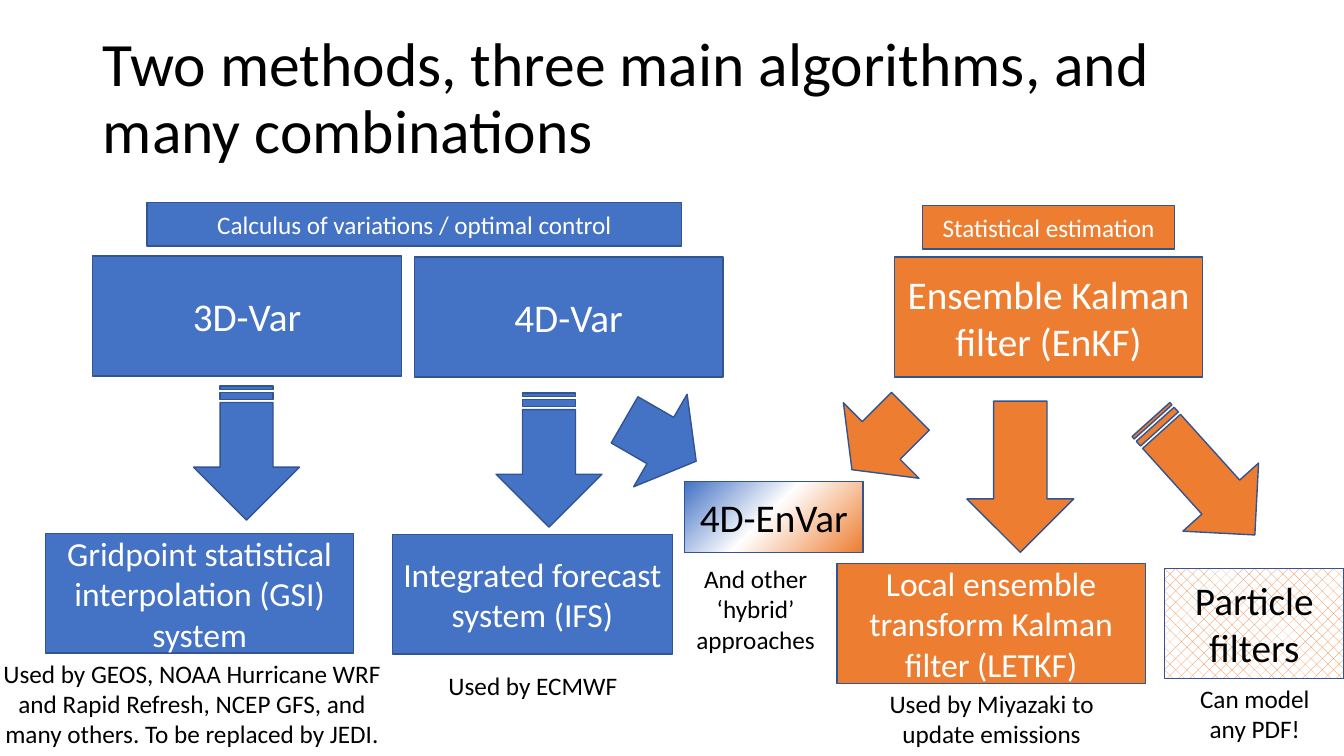
from pptx import Presentation
from pptx.dml.color import RGBColor
from pptx.enum.dml import MSO_PATTERN
from pptx.enum.shapes import MSO_SHAPE
from pptx.enum.text import MSO_ANCHOR, MSO_AUTO_SIZE, PP_ALIGN
from pptx.util import Inches, Pt

RECT = MSO_SHAPE.RECTANGLE
DOWN = MSO_SHAPE.DOWN_ARROW
STRIPED = MSO_SHAPE.STRIPED_RIGHT_ARROW
DOTS = MSO_PATTERN.PERCENT_25
LEFT, CENTER = PP_ALIGN.LEFT, PP_ALIGN.CENTER
TOP, MIDDLE = MSO_ANCHOR.TOP, MSO_ANCHOR.MIDDLE
FIXED = MSO_AUTO_SIZE.NONE

COLORS = {
    "blue": "4472C4",
    "orange": "ED7D31",
    "edge": "325491",
    "white": "FFFFFF",
    "black": "000000",
}


def color(name):
    return RGBColor.from_string(COLORS[name])


def write(frame, text, size=18, ink="black", align=CENTER, anchor=TOP, spacing=None):
    frame.word_wrap = True
    frame.auto_size = FIXED
    frame.vertical_anchor = anchor
    frame.text = text
    for para in frame.paragraphs:
        para.alignment = align
        if spacing:
            para.line_spacing = spacing
        font = para.font
        font.name = "Calibri"
        font.size = Pt(size)
        font.color.rgb = color(ink)


class Chart:
    """Holds the slide and draws its elements in one style."""

    def __init__(self, slide):
        self.slide = slide
        self.shapes = slide.shapes

    def title(self, text, box):
        shape = self.shapes.title
        shape.left, shape.top, shape.width, shape.height = map(Inches, box)
        write(shape.text_frame, text, size=44, align=LEFT, anchor=MIDDLE, spacing=0.9)

    def shape(self, kind, box, fill):
        shape = self.shapes.add_shape(kind, *map(Inches, box))
        shape.shadow.inherit = False
        shape.fill.solid()
        shape.fill.fore_color.rgb = color(fill)
        shape.line.color.rgb = color("edge")
        shape.line.width = Pt(1)
        return shape

    def box(self, text, box, fill, size=28, ink="white"):
        shape = self.shape(RECT, box, fill)
        write(shape.text_frame, text, size=size, ink=ink, anchor=MIDDLE)
        return shape

    def arrow(self, kind, box, fill, turn=0):
        self.shape(kind, box, fill).rotation = turn

    def note(self, text, box):
        shape = self.shapes.add_textbox(*map(Inches, box))
        write(shape.text_frame, text)

    def blend(self, shape, stops):
        """Diagonal gradient from (percent, color) pairs."""
        fill = shape.fill
        fill.gradient()
        fill.gradient_angle = 315
        first, last = fill.gradient_stops
        first.color.rgb, last.color.rgb = color(stops[0][1]), color(stops[-1][1])
        first.position, last.position = 0, 1
        # Extra stops need XML: each goes in before the last one
        group = shape._element.spPr.gradFill.gsLst
        for part, name in stops[1:-1]:
            stop = group.makeelement(group[0].tag, {"pos": str(part * 1000)})
            tint = stop.makeelement(group[0][0].tag, {"val": COLORS[name]})
            stop.append(tint)
            group.insert(len(group) - 1, stop)

    def hatch(self, shape, pattern, fore, back):
        fill = shape.fill
        fill.patterned()
        fill.pattern = pattern
        fill.fore_color.rgb = color(fore)
        fill.back_color.rgb = color(back)


def main():
    deck = Presentation()
    deck.slide_width, deck.slide_height = Inches(13.33), Inches(7.5)
    chart = Chart(deck.slides.add_slide(deck.slide_layouts[5]))
    wide, tall = 3.06, 1.19

    chart.title("Two methods, three main algorithms, and many combinations",
                (0.92, 0.27, 11.5, 1.45))

    # Methods
    chart.box("Calculus of variations / optimal control",
              (1.46, 2.01, 5.3, 0.43), "blue", size=18)
    chart.box("Statistical estimation", (9.15, 2.04, 2.5, 0.43), "orange", size=18)

    # Main algorithms
    for text, left, top, fill in (
        ("3D-Var", 0.92, 2.54, "blue"),
        ("4D-Var", 4.11, 2.55, "blue"),
        ("Ensemble Kalman filter (EnKF)", 8.87, 2.55, "orange"),
    ):
        chart.box(text, (left, top, wide, tall), fill)

    # Arrows to the systems
    for kind, box, fill, turn in (
        (STRIPED, (1.78, 3.97, 1.33, 1.05), "blue", 90),
        (STRIPED, (4.78, 4.04, 1.33, 1.05), "blue", 90),
        (DOWN, (6.02, 3.96, 1.06, 0.82), "blue", 300),
        (DOWN, (8.21, 3.96, 1.06, 0.82), "orange", 45),
        (DOWN, (9.59, 3.98, 1.06, 1.5), "orange", 0),
        (STRIPED, (11.16, 4.23, 1.54, 1.01), "orange", 48),
    ):
        chart.arrow(kind, box, fill, turn)

    # Systems
    for text, left, top, width, fill in (
        ("Gridpoint statistical interpolation (GSI) system", 0.45, 5.29, wide, "blue"),
        ("Integrated forecast system (IFS)", 3.89, 5.3, 2.78, "blue"),
        ("Local ensemble transform Kalman filter (LETKF)", 8.3, 5.59, wide, "orange"),
    ):
        chart.box(text, (left, top, width, tall), fill, size=24)

    # Hybrid and particle methods
    hybrid = chart.box("4D-EnVar", (6.79, 4.78, 1.77, 0.7), "white", ink="black")
    chart.blend(hybrid, [(0, "blue"), (47, "white"), (100, "orange")])
    filters = chart.box("Particle filters", (11.55, 5.64, 1.78, 1.09), "white", ink="black")
    chart.hatch(filters, DOTS, "orange", "white")

    # Notes on use
    for text, box in (
        ("Used by GEOS, NOAA Hurricane WRF and Rapid Refresh, NCEP GFS, "
         "and many others. To be replaced by JEDI.", (-0.15, 6.48, 4.11, 1.01)),
        ("Used by ECMWF", (4.12, 6.6, 2.33, 0.4)),
        ("And other ‘hybrid’ approaches", (6.58, 5.54, 1.83, 1.01)),
        ("Used by Miyazaki to update emissions", (8.39, 6.78, 2.89, 0.71)),
        ("Can model\nany PDF!", (11.67, 6.73, 1.55, 0.71)),
    ):
        chart.note(text, box)

    deck.save("out.pptx")


if __name__ == "__main__":
    main()
